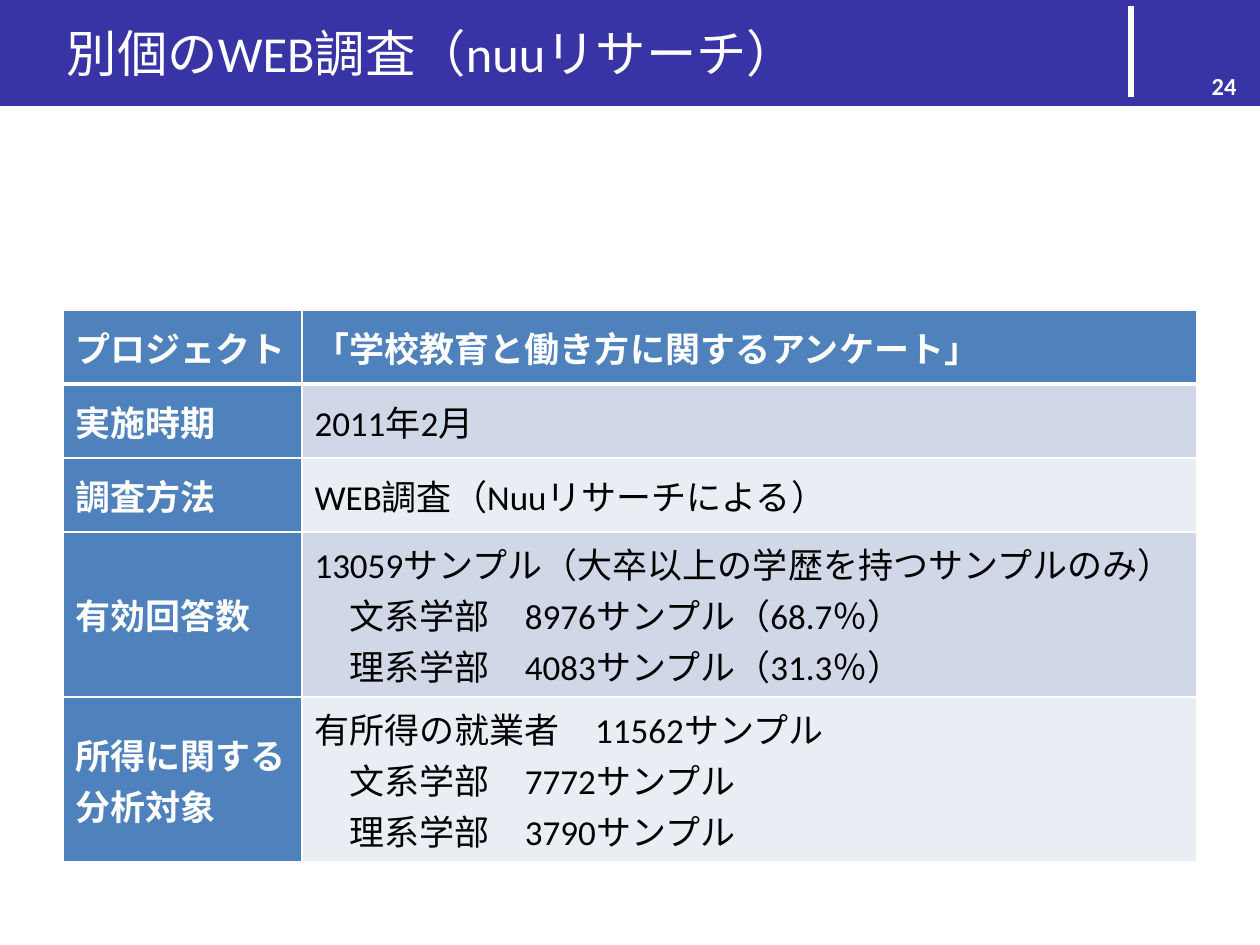
"""Build a slide that tables the facts of a separate web survey."""
from lxml import etree
from pptx import Presentation
from pptx.dml.color import RGBColor
from pptx.enum.shapes import MSO_CONNECTOR, MSO_SHAPE
from pptx.enum.text import MSO_ANCHOR, MSO_AUTO_SIZE, PP_ALIGN
from pptx.oxml.ns import qn
from pptx.util import Pt

RECT = MSO_SHAPE.RECTANGLE
LINE = MSO_CONNECTOR.STRAIGHT
MIDDLE = MSO_ANCHOR.MIDDLE
FIXED = MSO_AUTO_SIZE.NONE
LEFT, RIGHT = PP_ALIGN.LEFT, PP_ALIGN.RIGHT

TITLE = "別個のWEB調査（nuuリサーチ）"
NUMBER = "24"
ROWS = [
    ("プロジェクト", ["「学校教育と働き方に関するアンケート」"]),
    ("実施時期", ["2011年2月"]),
    ("調査方法", ["WEB調査（Nuuリサーチによる）"]),
    ("有効回答数", [
        "13059サンプル（大卒以上の学歴を持つサンプルのみ）",
        "　文系学部　8976サンプル（68.7％）",
        "　理系学部　4083サンプル（31.3％）",
    ]),
    ("所得に関する分析対象", [
        "有所得の就業者　11562サンプル",
        "　文系学部　7772サンプル",
        "　理系学部　3790サンプル",
    ]),
]

FONT = "Calibri"
WHITE, BLACK = "FFFFFF", "000000"
NAVY, BLUE = "3934A6", "4F81BD"
BANDS = ["E9EDF4", "D0D8E8"]
BARS = [(0, 988), (988, 272)]
BAR_H = 106
COLS = [239, 895]
SHORT, TALL = 74, 139


def px(*nums):
    return [round(n * 914400 / 126) for n in nums]


def tint(code):
    return RGBColor.from_string(code)


def write(frame, lines, size, color, bold=False, align=LEFT):
    for i, line in enumerate(lines):
        para = frame.add_paragraph() if i else frame.paragraphs[0]
        para.alignment = align
        run = para.add_run()
        run.text = line
        font = run.font
        font.name, font.size, font.bold = FONT, Pt(size), bold
        font.color.rgb = tint(color)


def fix(frame):
    frame.word_wrap = True
    frame.auto_size = FIXED
    frame.vertical_anchor = MIDDLE


def edge(cell, side, width):
    props = cell._tc.get_or_add_tcPr()
    line = etree.SubElement(props, qn("a:ln" + side), w=str(Pt(width)))
    fill = etree.SubElement(line, qn("a:solidFill"))
    etree.SubElement(fill, qn("a:srgbClr"), val=WHITE)


def draw_bars(shapes):
    for left, width in BARS:
        bar = shapes.add_shape(RECT, *px(left, 0, width, BAR_H))
        bar.shadow.inherit = False
        bar.fill.solid()
        bar.fill.fore_color.rgb = tint(NAVY)
        bar.line.fill.background()
    rule = shapes.add_connector(LINE, *px(1131, 6, 1131, 97))
    rule.line.color.rgb = tint(WHITE)
    rule.line.width = Pt(3.5)
    etree.SubElement(rule._element.spPr, qn("a:effectLst"))


def draw_title(shapes):
    title = shapes.title
    title.left, title.top, title.width, title.height = px(54, 8, 1024, 88)
    fix(title.text_frame)
    write(title.text_frame, [TITLE], 28.8, WHITE)
    shapes._spTree.append(title._element)


def draw_table(shapes):
    highs = [TALL if len(lines) > 1 else SHORT for _, lines in ROWS]
    table = shapes.add_table(
        len(ROWS), len(COLS), *px(63, 310, sum(COLS), sum(highs))).table
    for col, width in zip(table.columns, px(*COLS)):
        col.width = width
    for r, (label, lines) in enumerate(ROWS):
        table.rows[r].height = px(highs[r])[0]
        for c, texts in enumerate([[label], lines]):
            cell = table.cell(r, c)
            head = r == 0 or c == 0
            cell.vertical_anchor = MIDDLE
            write(cell.text_frame, texts, 20, WHITE if head else BLACK, head)
            sides = {"L": 1, "R": 1, "T": 3 if r == 1 else 1,
                     "B": 3 if r == 0 else 1}
            for side, width in sides.items():
                edge(cell, side, width)
            cell.fill.solid()
            cell.fill.fore_color.rgb = tint(BLUE if head else BANDS[r % 2])


def draw_number(shapes):
    box = shapes.add_textbox(*px(955, 53, 294, 66))
    fix(box.text_frame)
    write(box.text_frame, [NUMBER], 14, WHITE, True, RIGHT)


def main():
    deck = Presentation()
    deck.slide_width, deck.slide_height = px(1260, 945)
    shapes = deck.slides.add_slide(deck.slide_layouts[5]).shapes
    draw_bars(shapes)
    draw_title(shapes)
    draw_table(shapes)
    draw_number(shapes)
    deck.save("out.pptx")


if __name__ == "__main__":
    main()
